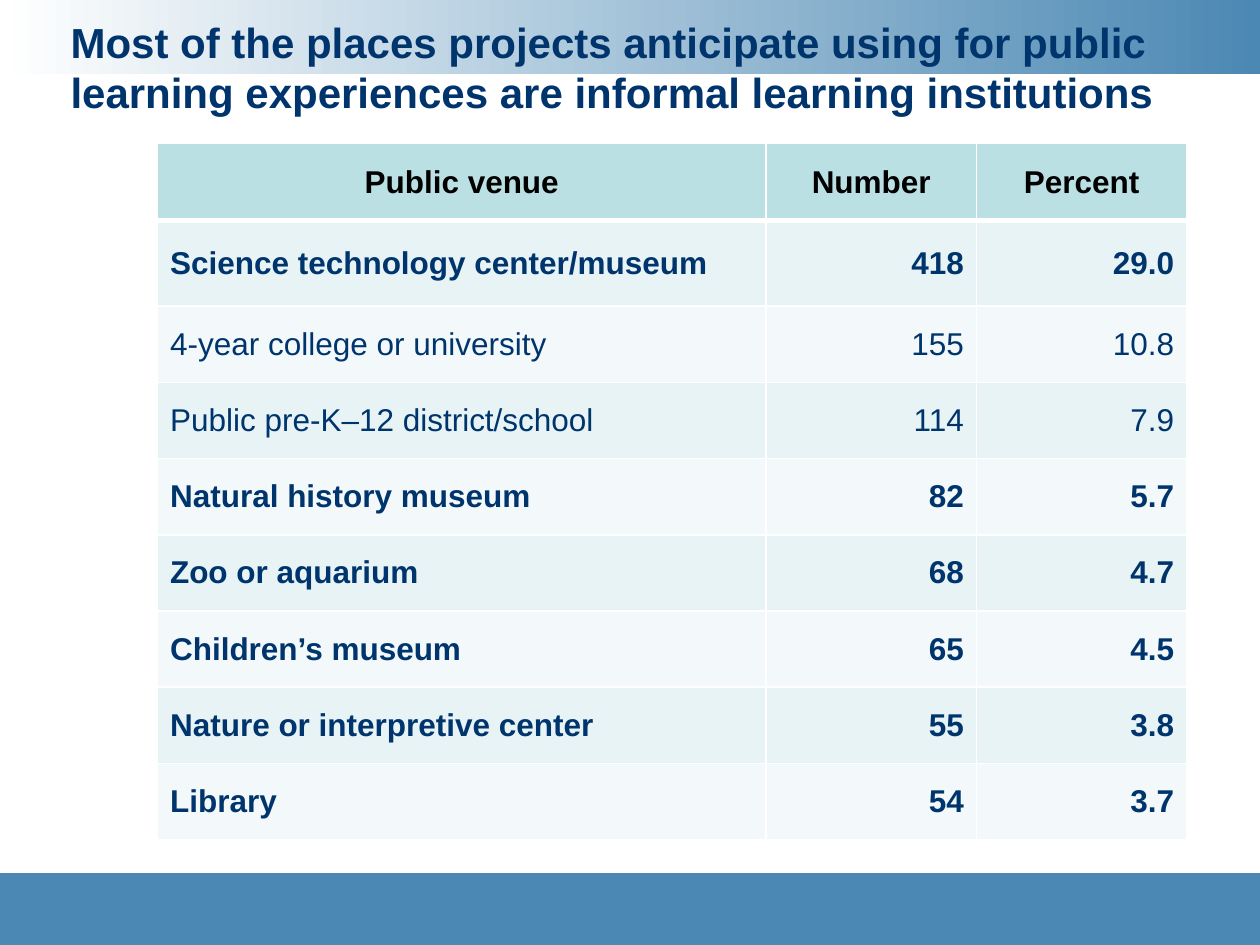
from lxml.etree import SubElement
from pptx import Presentation
from pptx.dml.color import RGBColor
from pptx.enum.shapes import MSO_SHAPE
from pptx.enum.text import MSO_ANCHOR, PP_ALIGN
from pptx.oxml.ns import qn
from pptx.util import Inches, Pt

HEADLINE = ("Most of the places projects anticipate using for public "
            "learning experiences are informal learning institutions")
HEADINGS = ("Public venue", "Number", "Percent")
VENUES = [
    ("Science technology center/museum", "418", "29.0"),
    ("4-year college or university", "155", "10.8"),
    ("Public pre-K–12 district/school", "114", "7.9"),
    ("Natural history museum", "82", "5.7"),
    ("Zoo or aquarium", "68", "4.7"),
    ("Children’s museum", "65", "4.5"),
    ("Nature or interpretive center", "55", "3.8"),
    ("Library", "54", "3.7"),
]
FORMAL_VENUES = {"4-year college or university", "Public pre-K–12 district/school"}
COLUMN_WIDTHS = (4.83, 1.67, 1.67)
HEADER_HEIGHT, FIRST_HEIGHT, ROW_HEIGHT = 0.61, 0.68, 0.605

WHITE = RGBColor(0xFF, 0xFF, 0xFF)
BLACK = RGBColor(0, 0, 0)
NAVY = RGBColor(0x00, 0x34, 0x6C)
BLUE = RGBColor(0x4B, 0x88, 0xB3)
HEADER_TEAL = RGBColor(0xBB, 0xE0, 0xE3)
ROW_TINTS = (RGBColor(0xE7, 0xF3, 0xF4), RGBColor(0xF3, 0xF9, 0xFA))


def write(frame, text, size=18, color=NAVY, bold=True, align=PP_ALIGN.LEFT):
    paragraph = frame.paragraphs[0]
    paragraph.alignment = align
    run = paragraph.add_run()
    run.text = text
    run.font.name = "Arial"
    run.font.size = Pt(size)
    run.font.bold = bold
    run.font.color.rgb = color


def add_band(slide, top, height):
    band = slide.shapes.add_shape(MSO_SHAPE.RECTANGLE, 0, Inches(top), Inches(10), Inches(height))
    band.shadow.inherit = False
    band.line.fill.background()
    return band


def set_borders(cell, top=1, bottom=1):
    properties = cell._tc.get_or_add_tcPr()
    widths = {"a:lnL": 1, "a:lnR": 1, "a:lnT": top, "a:lnB": bottom}
    for position, (side, width) in enumerate(widths.items()):
        border = SubElement(properties, qn(side), w=str(Pt(width)))
        fill = SubElement(border, qn("a:solidFill"))
        SubElement(fill, qn("a:srgbClr"), val=str(WHITE))
        properties.insert(position, border)


def fill_cell(cell, text, tint, top=1, bottom=1, **text_format):
    cell.vertical_anchor = MSO_ANCHOR.MIDDLE
    cell.fill.solid()
    cell.fill.fore_color.rgb = tint
    set_borders(cell, top, bottom)
    write(cell.text_frame, text, **text_format)


def add_venue_table(slide):
    heights = [HEADER_HEIGHT, FIRST_HEIGHT] + [ROW_HEIGHT] * (len(VENUES) - 1)
    venues = slide.shapes.add_table(
        len(heights), len(HEADINGS), Inches(1.25), Inches(1.14),
        Inches(sum(COLUMN_WIDTHS)), Inches(sum(heights))).table
    for column, width in zip(venues.columns, COLUMN_WIDTHS):
        column.width = Inches(width)
    for row, height in zip(venues.rows, heights):
        row.height = Inches(height)
    for column, heading in enumerate(HEADINGS):
        fill_cell(venues.cell(0, column), heading, HEADER_TEAL, bottom=3,
                  color=BLACK, align=PP_ALIGN.CENTER)
    for index, venue in enumerate(VENUES):
        for column, value in enumerate(venue):
            fill_cell(venues.cell(index + 1, column), value, ROW_TINTS[index % 2],
                      top=1 if index else 3, bold=venue[0] not in FORMAL_VENUES,
                      align=PP_ALIGN.RIGHT if column else PP_ALIGN.LEFT)


def main():
    deck = Presentation()
    deck.slide_width, deck.slide_height = Inches(10), Inches(7.5)
    slide = deck.slides.add_slide(deck.slide_layouts[5])

    header_fill = add_band(slide, 0, 0.59).fill
    header_fill.gradient()
    header_fill.gradient_angle = 0
    for stop, color, position in zip(header_fill.gradient_stops, (WHITE, BLUE), (0, 1)):
        stop.color.rgb = color
        stop.position = position
    footer_fill = add_band(slide, 6.93, 0.57).fill
    footer_fill.solid()
    footer_fill.fore_color.rgb = BLUE

    title = slide.shapes.title
    title.element.getparent().append(title.element)
    title.left, title.top = Inches(0.46), Inches(0.08)
    title.width, title.height = Inches(9.29), Inches(0.73)
    title.text_frame.vertical_anchor = MSO_ANCHOR.TOP
    title.text_frame.word_wrap = True
    write(title.text_frame, HEADLINE, size=24)

    add_venue_table(slide)
    deck.save("out.pptx")


if __name__ == "__main__":
    main()
